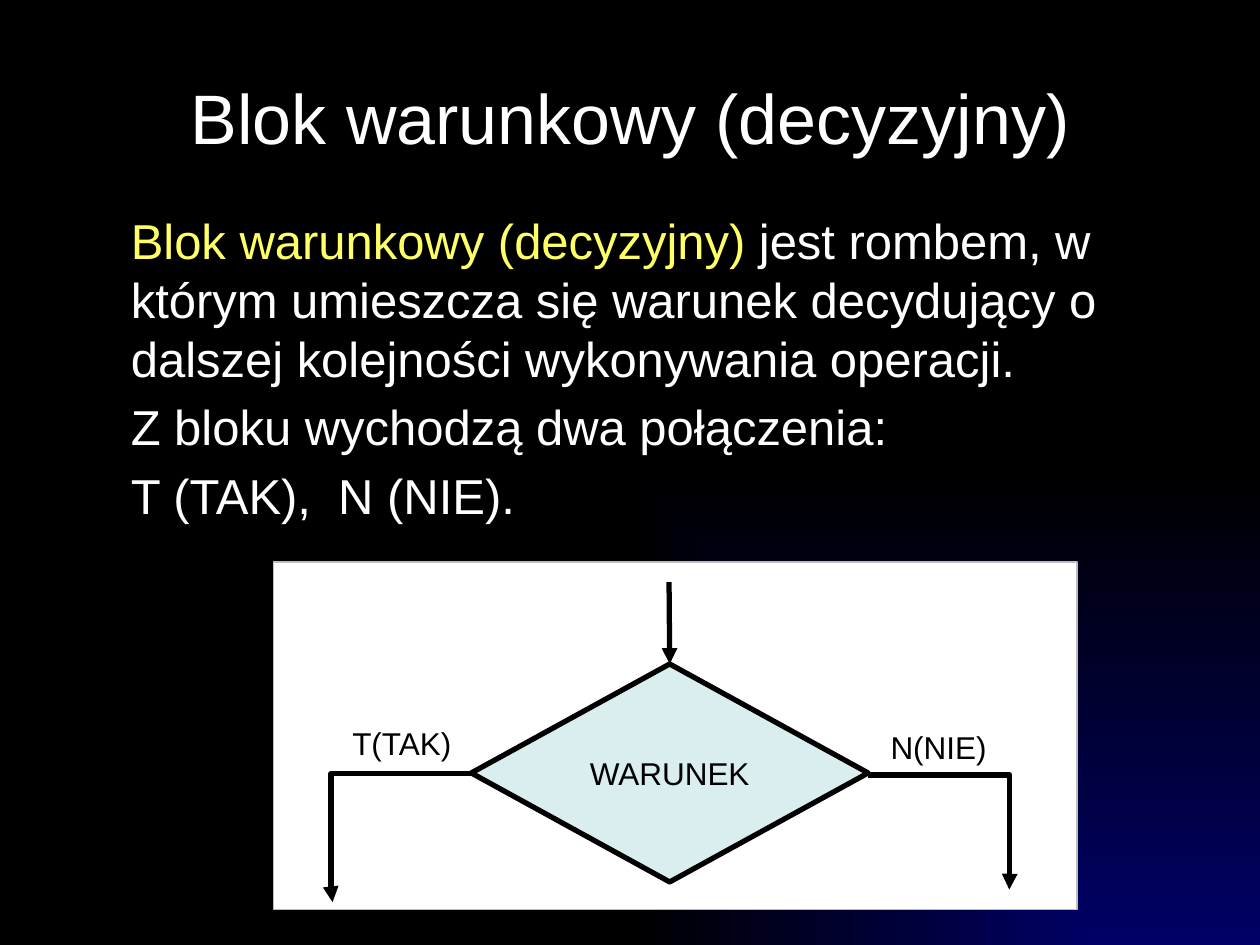
from lxml import etree
from pptx import Presentation
from pptx.dml.color import RGBColor
from pptx.enum.shapes import MSO_CONNECTOR, MSO_SHAPE
from pptx.enum.text import MSO_ANCHOR, PP_ALIGN
from pptx.oxml.ns import qn
from pptx.util import Inches, Pt

STRAIGHT = MSO_CONNECTOR.STRAIGHT
ELBOW = MSO_CONNECTOR.ELBOW
RECTANGLE = MSO_SHAPE.RECTANGLE
PROCESS = MSO_SHAPE.FLOWCHART_PROCESS
DECISION = MSO_SHAPE.FLOWCHART_DECISION
MIDDLE = MSO_ANCHOR.MIDDLE
CENTER = PP_ALIGN.CENTER
TOP_SITE = 0

FONT = "Arial"
COLORS = {
    "navy": "000066",
    "black": "000000",
    "white": "FFFFFF",
    "yellow": "FFFF66",
    "border": "BDBDBD",
    "decision": "DAEDEF",
}


def color(name):
    return RGBColor.from_string(COLORS[name])


def set_font(font, size, name):
    font.name = FONT
    font.size = Pt(size)
    font.color.rgb = color(name)


def paint_background(slide):
    fill = slide.background.fill
    fill.gradient()
    for stop, name, position in zip(fill.gradient_stops, ("navy", "black"), (0, 1)):
        stop.color.rgb = color(name)
        stop.position = position
    gradient = slide.background._cSld.find(".//" + qn("a:gradFill"))
    gradient.remove(gradient.find(qn("a:lin")))
    corner = etree.SubElement(gradient, qn("a:path"), path="rect")
    etree.SubElement(corner, qn("a:fillToRect"), l="100000", t="100000")


def add_title(slide, text):
    title = slide.shapes.title
    title.left, title.top = Inches(0.5), Inches(0.3)
    title.width, title.height = Inches(9), Inches(1.25)
    title.text_frame.vertical_anchor = MIDDLE
    heading = title.text_frame.paragraphs[0]
    heading.text = text
    heading.alignment = CENTER
    set_font(heading.font, 40, "white")


def add_description(slide, paragraphs):
    box = slide.shapes.add_textbox(Inches(0.94), Inches(1.62), Inches(8.07), Inches(4.02))
    frame = box.text_frame
    frame.word_wrap = True
    for index, runs in enumerate(paragraphs):
        paragraph = frame.paragraphs[0] if index == 0 else frame.add_paragraph()
        paragraph.space_before = Pt(5.6)
        set_font(paragraph.font, 28, "white")
        for text, name in runs:
            run = paragraph.add_run()
            run.text = text
            run.font.color.rgb = color(name)


def add_block(slide, kind, left, top, width, height, text="", fill=None, line=None, weight=1):
    block = slide.shapes.add_shape(
        kind, Inches(left), Inches(top), Inches(width), Inches(height))
    block.shadow.inherit = False
    if fill:
        block.fill.solid()
        block.fill.fore_color.rgb = color(fill)
    else:
        block.fill.background()
    if line:
        block.line.color.rgb = color(line)
        block.line.width = Pt(weight)
    else:
        block.line.fill.background()
    if text:
        block.text_frame.vertical_anchor = MIDDLE
        label = block.text_frame.paragraphs[0]
        label.text = text
        label.alignment = CENTER
        set_font(label.font, 18, "black")
    return block


def add_arrow(slide, kind, start, end, bend=None):
    arrow = slide.shapes.add_connector(kind, *map(Inches, start + end))
    arrow.line.color.rgb = color("black")
    arrow.line.width = Pt(3)
    properties = arrow._element.spPr
    etree.SubElement(properties.find(qn("a:ln")), qn("a:tailEnd"), type="triangle")
    etree.SubElement(properties, qn("a:effectLst"))
    if bend:
        adjustments = properties.find(qn("a:prstGeom")).find(qn("a:avLst"))
        etree.SubElement(adjustments, qn("a:gd"), name="adj1", fmla=f"val {bend}")
    return arrow


def add_flowchart(slide):
    add_block(slide, RECTANGLE, 2.17, 4.46, 6.38, 2.76, fill="white", line="border")
    condition = add_block(slide, DECISION, 3.74, 5.27, 3.15, 1.73, "WARUNEK",
                          fill="decision", line="black", weight=3)
    entry = add_arrow(slide, STRAIGHT, (5.31, 4.62), (5.31, 5.27))
    entry.end_connect(condition, TOP_SITE)
    add_arrow(slide, ELBOW, (3.74, 6.14), (2.64, 7.16), bend=101200)
    add_arrow(slide, ELBOW, (6.89, 6.15), (8.01, 7.06), bend=100300)
    for text, left, top in (("N(NIE)", 6.82, 5.77), ("T(TAK)", 2.56, 5.74)):
        add_block(slide, PROCESS, left, top, 1.26, 0.31, text)


def main():
    presentation = Presentation()
    presentation.slide_width = Inches(10)
    presentation.slide_height = Inches(7.5)
    slide = presentation.slides.add_slide(presentation.slide_layouts[5])
    paint_background(slide)
    add_title(slide, "Blok warunkowy (decyzyjny)")
    add_description(slide, [
        [("Blok warunkowy (decyzyjny)", "yellow"),
         (" jest rombem, w którym umieszcza się warunek decydujący o "
          "dalszej kolejności wykonywania operacji.", "white")],
        [("Z bloku wychodzą dwa połączenia:", "white")],
        [("T (TAK),  N (NIE).", "white")],
    ])
    add_flowchart(slide)
    presentation.save("out.pptx")


if __name__ == "__main__":
    main()
